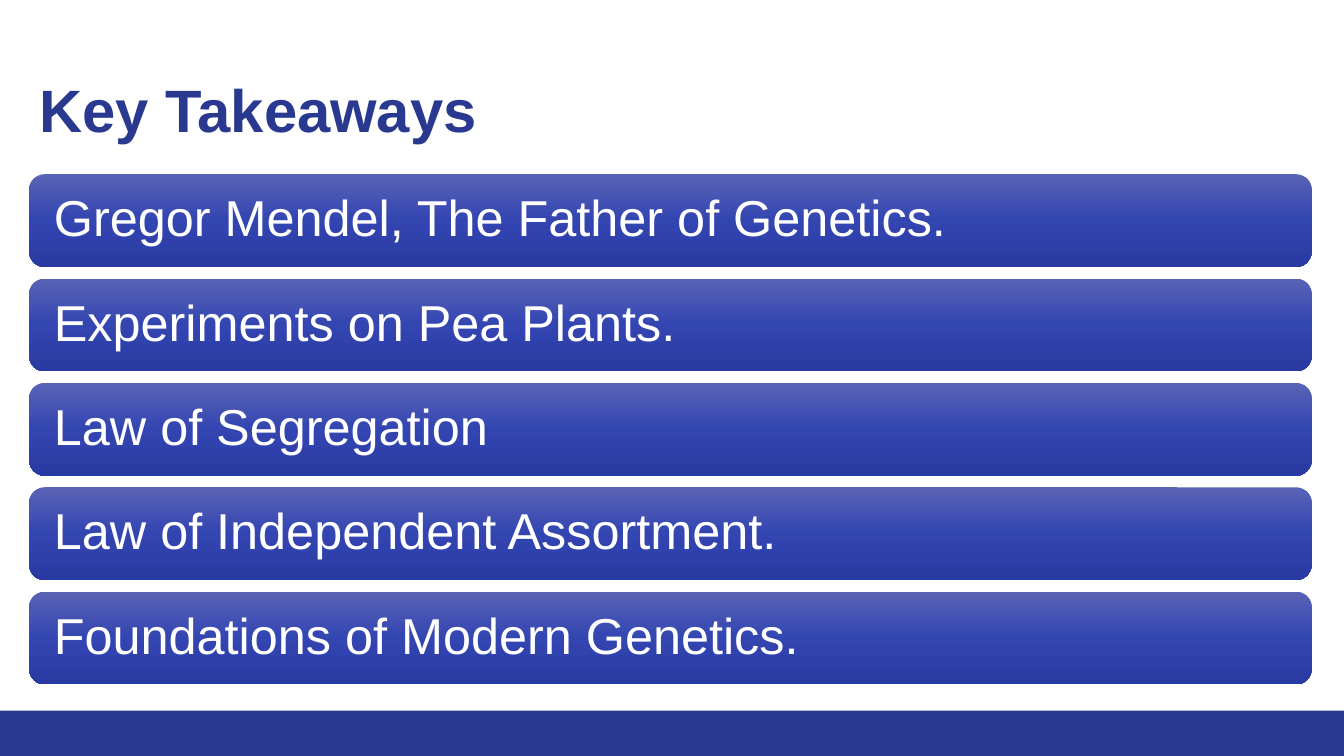
from copy import deepcopy

from pptx import Presentation
from pptx.dml.color import RGBColor
from pptx.enum.shapes import MSO_SHAPE
from pptx.enum.text import MSO_ANCHOR, MSO_AUTO_SIZE, PP_ALIGN
from pptx.oxml.ns import qn
from pptx.util import Pt

TITLE = "Key Takeaways"
TAKEAWAYS = [
    "Gregor Mendel, The Father of Genetics.",
    "Experiments on Pea Plants.",
    "Law of Segregation",
    "Law of Independent Assortment.",
    "Foundations of Modern Genetics.",
]
NAVY, WHITE = "2A3990", "FFFFFF"
GRADIENT = [(0, "5963B6"), (0.5, "3345B1"), (1, "293AA2")]
TITLE_FONT = {"name": "Arial", "size": Pt(42.7), "bold": True}
ITEM_FONT = {"name": "Arial", "size": Pt(36), "bold": False}
FRAME = {"word_wrap": True, "auto_size": MSO_AUTO_SIZE.NONE, "vertical_anchor": MSO_ANCHOR.MIDDLE}
ITEM_FRAME = FRAME | {f"margin_{side}": Pt(14.4) for side in ("left", "right", "top", "bottom")}
PARAGRAPH = {"alignment": PP_ALIGN.LEFT, "line_spacing": 0.9}

SLIDE_W, SLIDE_H = 960, 540
FOOTER_H = 32.4
LEFT, TOP = 20.9, 124.4
ITEM_W, ITEM_H, PITCH = 916, 66.3, 74.55


def rgb(color):
    return RGBColor.from_string(color)


def apply(target, values):
    for name, value in values.items():
        setattr(target, name, value)


def write(s, text, frame, font, color):
    tf = s.text_frame
    apply(tf, frame)
    p = tf.paragraphs[0]
    apply(p, PARAGRAPH)
    r = p.add_run()
    r.text = text
    apply(r.font, font)
    r.font.color.rgb = rgb(color)


def add_box(shapes, kind, *box):
    s = shapes.add_shape(kind, *map(Pt, box))
    s.shadow.inherit = False
    s.line.fill.background()
    return s


def fill_gradient(s):
    s.fill.gradient()
    s.fill.gradient_angle = 270
    stops = s._element.spPr.find(qn("a:gradFill")).find(qn("a:gsLst"))
    stops.append(deepcopy(stops[0]))
    for stop, (position, color) in zip(s.fill.gradient_stops, GRADIENT):
        stop.position = position
        stop.color.rgb = rgb(color)


def main():
    prs = Presentation()
    apply(prs, {"slide_width": Pt(SLIDE_W), "slide_height": Pt(SLIDE_H)})
    slide = prs.slides.add_slide(prs.slide_layouts[5])
    sp = slide.shapes

    title = sp.title
    apply(title, {"left": Pt(LEFT), "top": Pt(28.8), "width": Pt(913.7), "height": Pt(104.4)})
    write(title, TITLE, FRAME, TITLE_FONT, NAVY)

    footer = add_box(sp, MSO_SHAPE.RECTANGLE, 0, SLIDE_H - FOOTER_H, SLIDE_W, FOOTER_H)
    footer.fill.solid()
    footer.fill.fore_color.rgb = rgb(NAVY)

    for i, text in enumerate(TAKEAWAYS):
        s = add_box(sp, MSO_SHAPE.ROUNDED_RECTANGLE, LEFT, TOP + i * PITCH, ITEM_W, ITEM_H)
        fill_gradient(s)
        write(s, text, ITEM_FRAME, ITEM_FONT, WHITE)

    prs.save("out.pptx")


if __name__ == "__main__":
    main()
